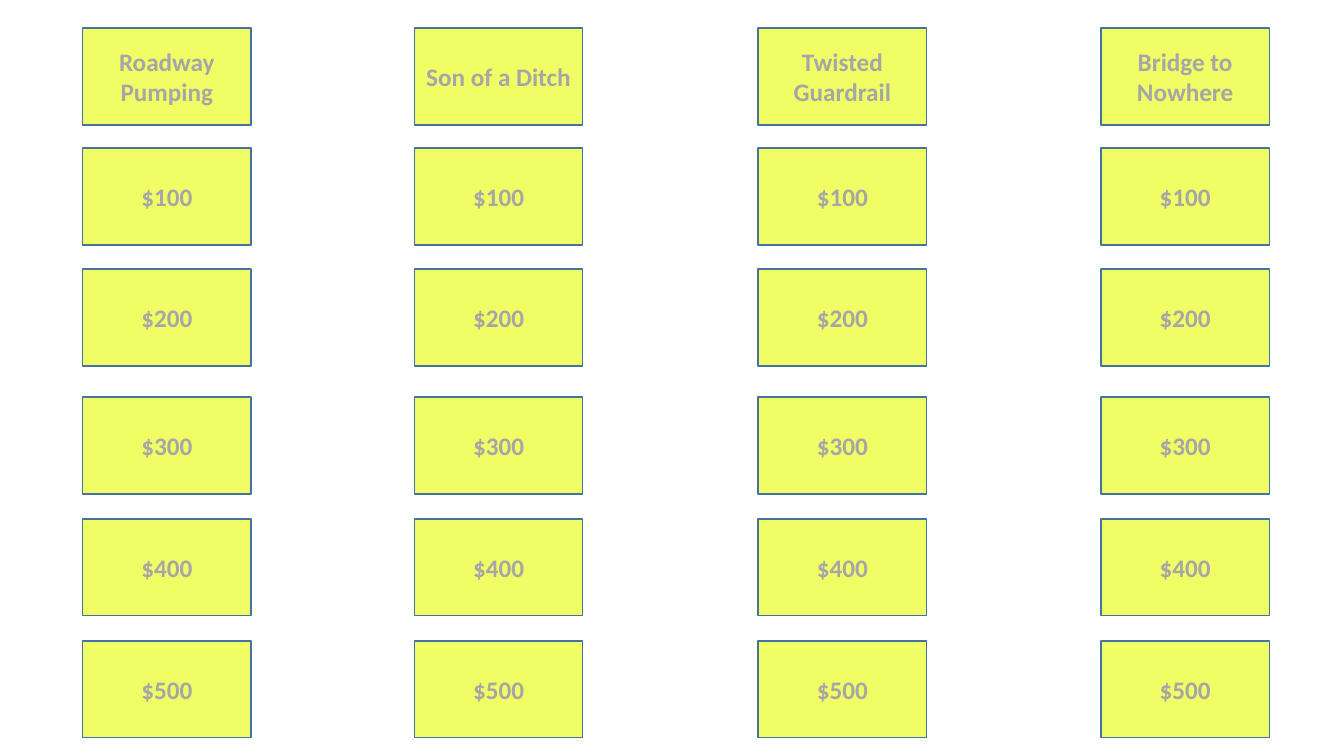
from pptx import Presentation
from pptx.dml.color import RGBColor
from pptx.enum.shapes import MSO_SHAPE as Preset
from pptx.enum.text import MSO_ANCHOR as Anchor, PP_ALIGN as Align
from pptx.util import Inches, Pt

CARD_WIDTH, CARD_HEIGHT = 1.67, 0.96
CATEGORY_LEFTS = {
    "Roadway Pumping": 0.82,
    "Son of a Ditch": 4.11,
    "Twisted Guardrail": 7.52,
    "Bridge to Nowhere": 10.92,
}
PRIZE_OFFSETS = {"$100": 1.19, "$200": 2.39, "$300": 3.66, "$400": 4.87, "$500": 6.08}
BOARD_TOP = 0.28
CARD_FONT = {"name": "Calibri", "size": Pt(18), "bold": True}


def color(hex_value):
    return RGBColor.from_string(hex_value)


def add_card(slide, left, top, label):
    card = slide.shapes.add_shape(
        Preset.RECTANGLE, Inches(left), Inches(top), Inches(CARD_WIDTH), Inches(CARD_HEIGHT)
    )
    card.shadow.inherit = False
    card.fill.solid()
    card.fill.fore_color.rgb = color("F0FD64")
    card.line.color.rgb = color("43739E")
    card.line.width = Pt(1)
    card.text_frame.word_wrap = True
    card.text_frame.vertical_anchor = Anchor.MIDDLE
    caption = card.text_frame.paragraphs[0]
    caption.alignment = Align.CENTER
    run = caption.add_run()
    run.text = label
    for attribute, value in CARD_FONT.items():
        setattr(run.font, attribute, value)
    run.font.color.rgb = color("A6A6A6")


def add_category(slide, left, top, category):
    add_card(slide, left, top, category)
    for prize, offset in PRIZE_OFFSETS.items():
        add_card(slide, left, top + offset, prize)


def main():
    deck = Presentation()
    deck.slide_width, deck.slide_height = Inches(13.33), Inches(7.5)
    board = deck.slides.add_slide(deck.slide_layouts[6])
    for category, left in CATEGORY_LEFTS.items():
        add_category(board, left, BOARD_TOP, category)
    deck.save("out.pptx")


if __name__ == "__main__":
    main()
